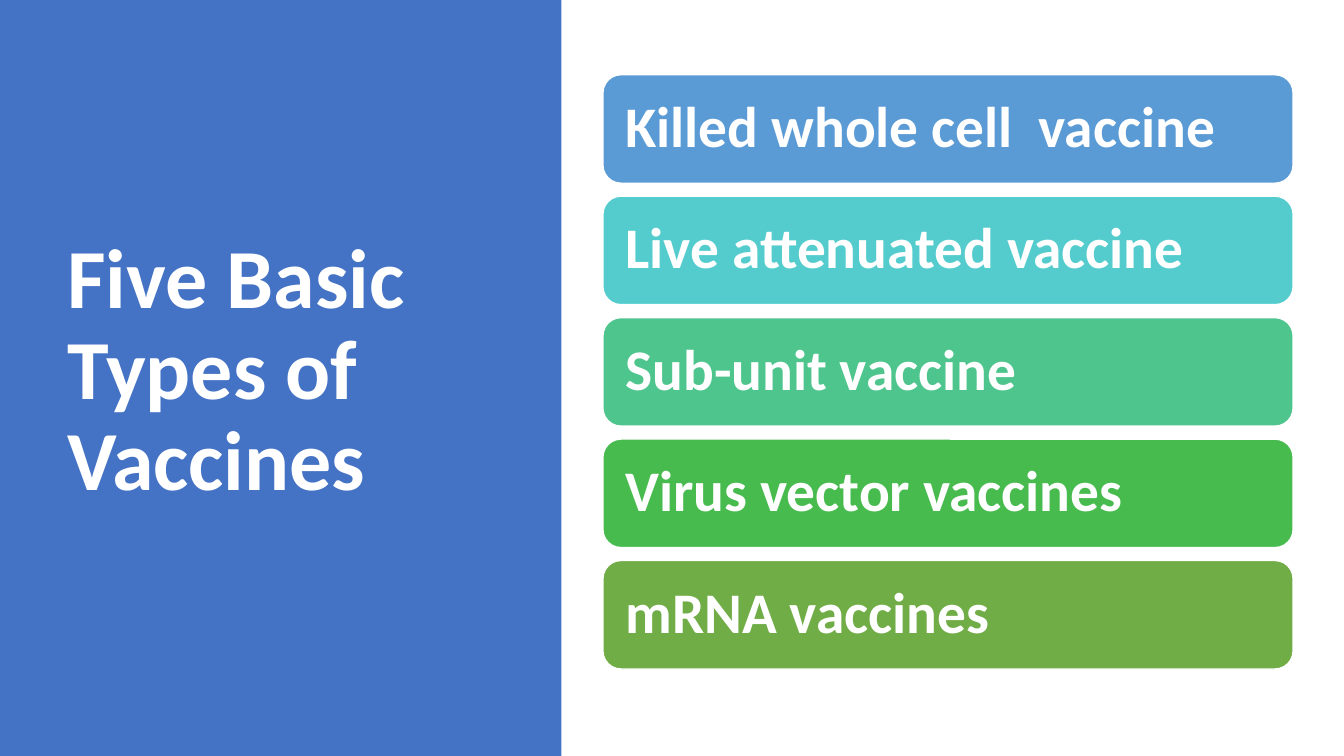
from dataclasses import dataclass

from pptx import Presentation
from pptx.dml.color import RGBColor as Color
from pptx.enum.shapes import MSO_SHAPE as Shape
from pptx.enum.text import MSO_ANCHOR as Anchor, PP_ALIGN as Align
from pptx.util import Pt


@dataclass(frozen=True)
class Theme:
    """Colours, font and type sizes of the slide."""
    font: str = "Calibri"
    white: str = "FFFFFF"
    panel: str = "4472C4"
    title_size: float = 60
    item_size: float = 41


VACCINES = [
    ("Killed whole cell  vaccine", "5B9BD5"),
    ("Live attenuated vaccine", "54CCCD"),
    ("Sub-unit vaccine", "4DC58D"),
    ("Virus vector vaccines", "48BB4F"),
    ("mRNA vaccines", "70AD47"),
]


def write(frame, text, *, font, size, color, bold=True, margins=(7.2, 3.6)):
    """Fill a text frame with one left-aligned, vertically centred paragraph."""
    frame.word_wrap = True
    frame.vertical_anchor = Anchor.MIDDLE
    frame.margin_left = frame.margin_right = Pt(margins[0])
    frame.margin_top = frame.margin_bottom = Pt(margins[1])
    para = frame.paragraphs[0]
    para.alignment = Align.LEFT
    para.line_spacing = 0.9
    span = para.add_run()
    span.text = text
    span.font.name = font
    span.font.size = Pt(size)
    span.font.bold = bold
    span.font.color.rgb = Color.from_string(color)


class Painter:
    """Draws elements on one page in one theme."""

    def __init__(self, page, theme):
        """Keep the page and the theme."""
        self.page = page
        self.theme = theme

    def block(self, kind, left, top, width, height, fill, outline=None):
        """Add a filled shape, with an outline if a colour is given."""
        box = self.page.shapes.add_shape(
            kind, Pt(left), Pt(top), Pt(width), Pt(height))
        box.shadow.inherit = False
        box.fill.solid()
        box.fill.fore_color.rgb = Color.from_string(fill)
        if outline:
            box.line.color.rgb = Color.from_string(outline)
            box.line.width = Pt(1)
        else:
            box.line.fill.background()
        return box

    def title(self, text, left, top, width, height):
        """Add the slide heading."""
        box = self.page.shapes.add_textbox(
            Pt(left), Pt(top), Pt(width), Pt(height))
        write(box.text_frame, text, font=self.theme.font,
              size=self.theme.title_size, color=self.theme.white)

    def item(self, text, fill, left, top, width, height):
        """Add a rounded bar with its label."""
        bar = self.block(Shape.ROUNDED_RECTANGLE, left, top, width, height,
                         fill, self.theme.white)
        write(bar.text_frame, text, font=self.theme.font,
              size=self.theme.item_size, color=self.theme.white,
              margins=(12.3, 8))


def main():
    """Build and save the slide."""
    deck = Presentation()
    deck.slide_width, deck.slide_height = Pt(960), Pt(540)
    page = deck.slides.add_slide(deck.slide_layouts[6])
    theme = Theme()
    painter = Painter(page, theme)
    painter.block(Shape.RECTANGLE, 0, 0, 401, 540, theme.panel)
    painter.title("Five Basic Types of Vaccines", 41, 49, 299.5, 433.5)
    first_top, pitch = 53.4, 86.75
    for row, (name, fill) in enumerate(VACCINES):
        painter.item(name, fill, 430.7, first_top + row * pitch, 493, 77.5)
    deck.save("out.pptx")


if __name__ == "__main__":
    main()
